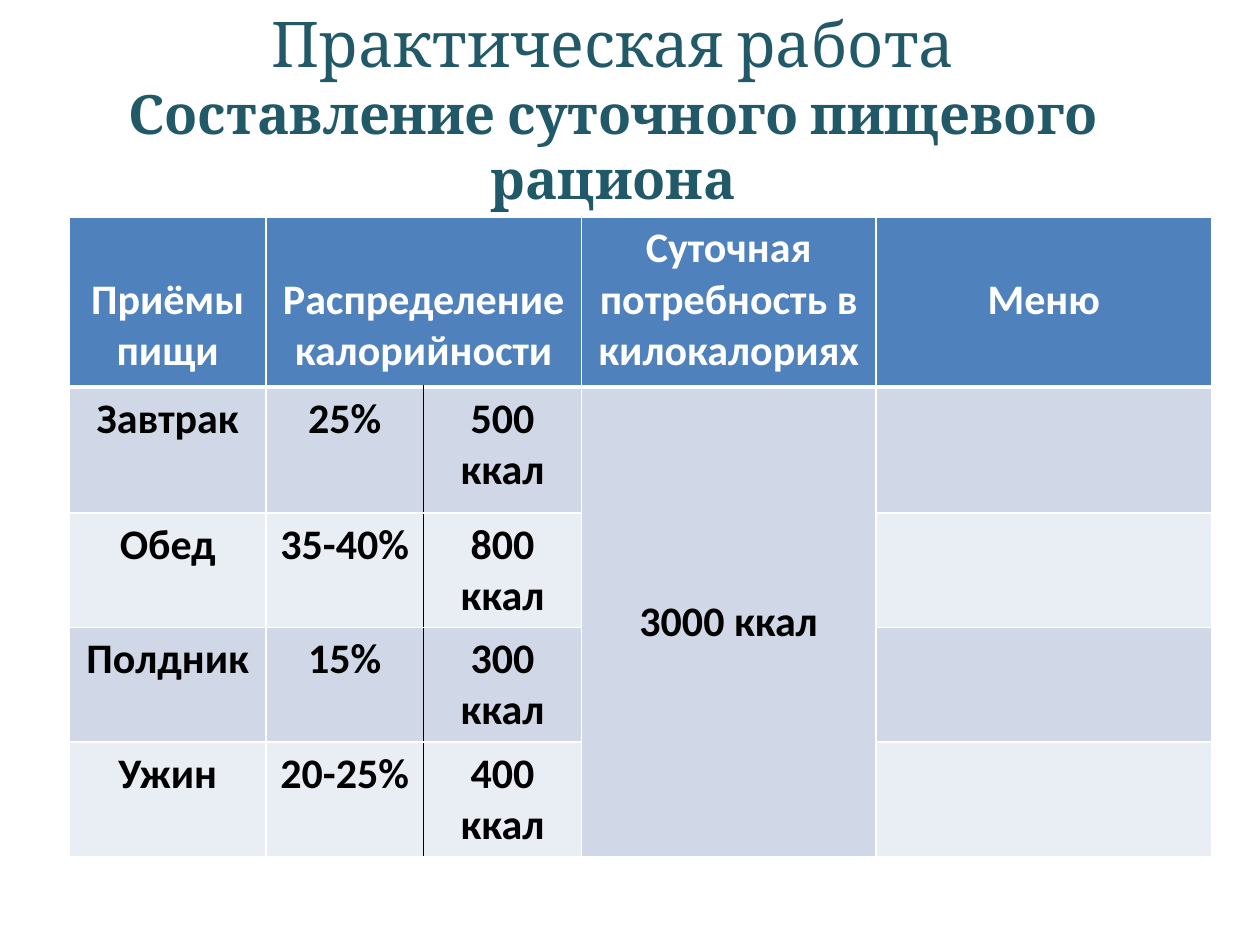
"""Build the slide with the daily food ration table."""
import pptx
import pptx.dml.color
import pptx.enum.text
import pptx.oxml.ns
import pptx.util
import lxml.etree

Cm, Pt = pptx.util.Cm, pptx.util.Pt
CENTER = pptx.enum.text.PP_ALIGN.CENTER
MIDDLE = pptx.enum.text.MSO_ANCHOR.MIDDLE
COLORS = {"title": "215968", "header": "4F81BD", "odd": "D0D8E8",
          "even": "E9EDF4", "white": "FFFFFF", "black": "000000"}
ROWS = [
    ["Приёмы пищи", "Распределение калорийности", "", "Суточная потребность в килокалориях", "Меню"],
    ["Завтрак", "25%", "500 ккал", "3000 ккал", ""],
    ["Обед", "35-40%", "800 ккал", "", ""],
    ["Полдник", "15%", "300 ккал", "", ""],
    ["Ужин", "20-25%", "400 ккал", "", ""],
]
WIDTHS = [3.96, 3.18, 3.18, 5.94, 6.76]
HEIGHTS = [3.43, 2.54, 2.31, 2.31, 2.31]


def add_run(p, text, size, font, color, bold):
    r = p.add_run()
    r.text = text
    r.font.size, r.font.name, r.font.bold = Pt(size), font, bold
    r.font.color.rgb = pptx.dml.color.RGBColor.from_string(COLORS[color])


def add_border(cell, side, color, width):
    qn = pptx.oxml.ns.qn
    ln = lxml.etree.SubElement(cell._tc.get_or_add_tcPr(), qn(f"a:ln{side}"), w=str(Pt(width)))
    fill = lxml.etree.SubElement(ln, qn("a:solidFill"))
    lxml.etree.SubElement(fill, qn("a:srgbClr"), val=COLORS[color])


prs = pptx.Presentation()
prs.slide_width, prs.slide_height = Cm(25.4), Cm(19.05)
s = prs.slides.add_slide(prs.slide_layouts[6])

sp = s.shapes.add_textbox(Cm(0.79), Cm(0.58), Cm(23.14), Cm(3.18))
tf = sp.text_frame
tf.word_wrap = True
tf.vertical_anchor = MIDDLE
p = tf.paragraphs[0]
p.alignment = CENTER
add_run(p, "Практическая работа", 36, "Cambria", "title", False)
p.add_line_break()
add_run(p, "Составление суточного пищевого рациона", 31, "Cambria", "title", True)

table = s.shapes.add_table(len(ROWS), len(WIDTHS), Cm(1.4), Cm(4.37),
                           Cm(sum(WIDTHS)), Cm(sum(HEIGHTS))).table
for col, width in zip(table.columns, WIDTHS):
    col.width = Cm(width)
for row, height in zip(table.rows, HEIGHTS):
    row.height = Cm(height)
table.cell(0, 1).merge(table.cell(0, 2))
table.cell(1, 3).merge(table.cell(4, 3))

for i, texts in enumerate(ROWS):
    for j, text in enumerate(texts):
        cell = table.cell(i, j)
        add_border(cell, "L", "black" if i and j == 2 else "white", 1)
        add_border(cell, "R", "black" if i and j == 1 else "white", 1)
        add_border(cell, "T", "white", 3 if i == 1 else 1)
        add_border(cell, "B", "white", 3 if i == 0 else 1)
        band = "header" if i == 0 else "odd" if i % 2 or j == 3 else "even"
        cell.fill.solid()
        cell.fill.fore_color.rgb = pptx.dml.color.RGBColor.from_string(COLORS[band])
        if i == 0 and j != 3:
            cell.margin_top = Cm(1.16)
        if text:
            p = cell.text_frame.paragraphs[0]
            p.alignment = CENTER
            add_run(p, text, 24, "Calibri", "black" if i else "white", True)
table.cell(1, 3).vertical_anchor = MIDDLE

prs.save("out.pptx")
